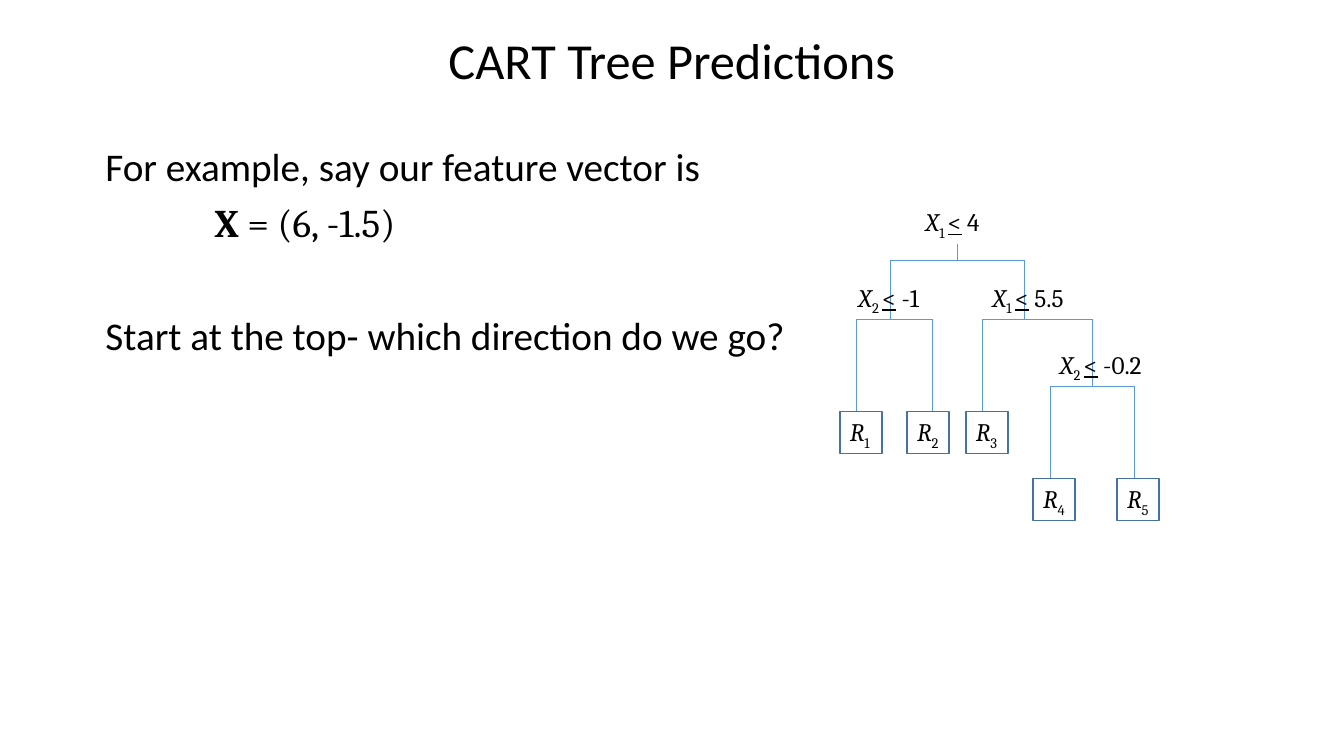
from lxml import etree
from pptx import Presentation
from pptx import util as u
from pptx.dml.color import RGBColor
from pptx.enum import shapes, text
from pptx.oxml import ns

PX = 9525  # EMU per px, 96 px to the inch
COLORS = {"ink": "000000", "branch": "5B9BD5", "leaf": "43739E"}
SUB = -25000


def write(para, spans, size):
    """Add (wording, font name, format values, baseline) runs to a paragraph."""
    for wording, font, formats, baseline in spans:
        span = para.add_run()
        span.text = wording
        values = {"name": font, "size": u.Pt(size), **formats}
        for key, value in values.items():
            setattr(span.font, key, value)
        span.font.color.rgb = RGBColor.from_string(COLORS["ink"])
        if baseline:
            span._r.get_or_add_rPr().set("baseline", str(baseline))


def branch(x1, y1, x2, y2):
    line = page.shapes.add_connector(
        shapes.MSO_CONNECTOR.STRAIGHT, x1 * PX, y1 * PX, x2 * PX, y2 * PX)
    line.line.color.rgb = RGBColor.from_string(COLORS["branch"])
    line.line.width = u.Pt(0.5)
    etree.SubElement(line._element.spPr, ns.qn("a:effectLst"))


deck = Presentation()
deck.slide_width, deck.slide_height = 1280 * PX, 720 * PX
page = deck.slides.add_slide(deck.slide_layouts[6])

# Title
title = page.shapes.add_textbox(208 * PX, 0, 864 * PX, 120 * PX).text_frame
title.word_wrap = True
title.vertical_anchor = text.MSO_ANCHOR.MIDDLE
para = title.paragraphs[0]
para.alignment = text.PP_ALIGN.CENTER
para.line_spacing = 0.9
write(para, [("CART Tree Predictions", "Calibri", {}, 0)], 36)

# Body: space before in points, left indent in px, runs
body_lines = [
    (10, 0, [("For example, say our feature vector is", "Calibri", {}, 0)]),
    (10, 104, [("X", "Cambria", {"bold": True}, 0),
               (" = (6, -1.5)", "Cambria", {}, 0)]),
    (50, 0, [("Start at the top- which direction do we go?", "Calibri", {}, 0)]),
]
body = page.shapes.add_textbox(91 * PX, 136 * PX, 693 * PX, 540 * PX).text_frame
body.word_wrap = True
for index, (before, indent, spans) in enumerate(body_lines):
    para = body.add_paragraph() if index else body.paragraphs[0]
    para.line_spacing = 0.9
    para.space_before = u.Pt(before)
    para._p.get_or_add_pPr().set("marL", str(indent * PX))
    write(para, spans, 28)

# Tree branches: left, right, bar height, ends of left and right drops
forks = [
    (848, 976, 248, 304, 304),
    (816, 888, 304, 392, 392),
    (936, 1040, 304, 392, 368),
    (1000, 1080, 368, 456, 456),
]
branch(912, 232, 912, 248)
for left, right, bar, left_end, right_end in forks:
    branch(left, bar, right, bar)
    branch(left, bar, left, left_end)
    branch(right, bar, right, right_end)

# Split rules
rules = [(872, 192, "1", "4"), (808, 264, "2", "-1"),
         (936, 264, "1", "5.5"), (1000, 328, "2", "-0.2")]
for left, top, feature, limit in rules:
    box = page.shapes.add_textbox(left * PX, top * PX, 120 * PX, 38 * PX)
    box.text_frame.word_wrap = True
    write(box.text_frame.paragraphs[0], [
        ("X", "Cambria", {"italic": True}, 0),
        (feature + " ", "Cambria", {}, SUB),
        ("<", "Cambria", {"underline": True}, 0),
        (" " + limit, "Cambria", {}, 0),
    ], 18)

# Leaf regions
leaves = [(800, 392), (864, 392), (920, 392), (984, 456), (1064, 456)]
for number, (left, top) in enumerate(leaves, 1):
    leaf = page.shapes.add_shape(
        shapes.MSO_SHAPE.RECTANGLE, left * PX, top * PX, 40 * PX, 40 * PX)
    leaf.shadow.inherit = False
    leaf.fill.background()
    leaf.line.color.rgb = RGBColor.from_string(COLORS["leaf"])
    leaf.line.width = u.Pt(1)
    frame = leaf.text_frame
    frame.margin_right = 0
    frame.word_wrap = False
    frame.vertical_anchor = text.MSO_ANCHOR.TOP
    frame.paragraphs[0].alignment = text.PP_ALIGN.LEFT
    write(frame.paragraphs[0], [("R", "Cambria", {"italic": True}, 0),
                                (str(number), "Cambria", {}, SUB)], 18)

deck.save("out.pptx")
